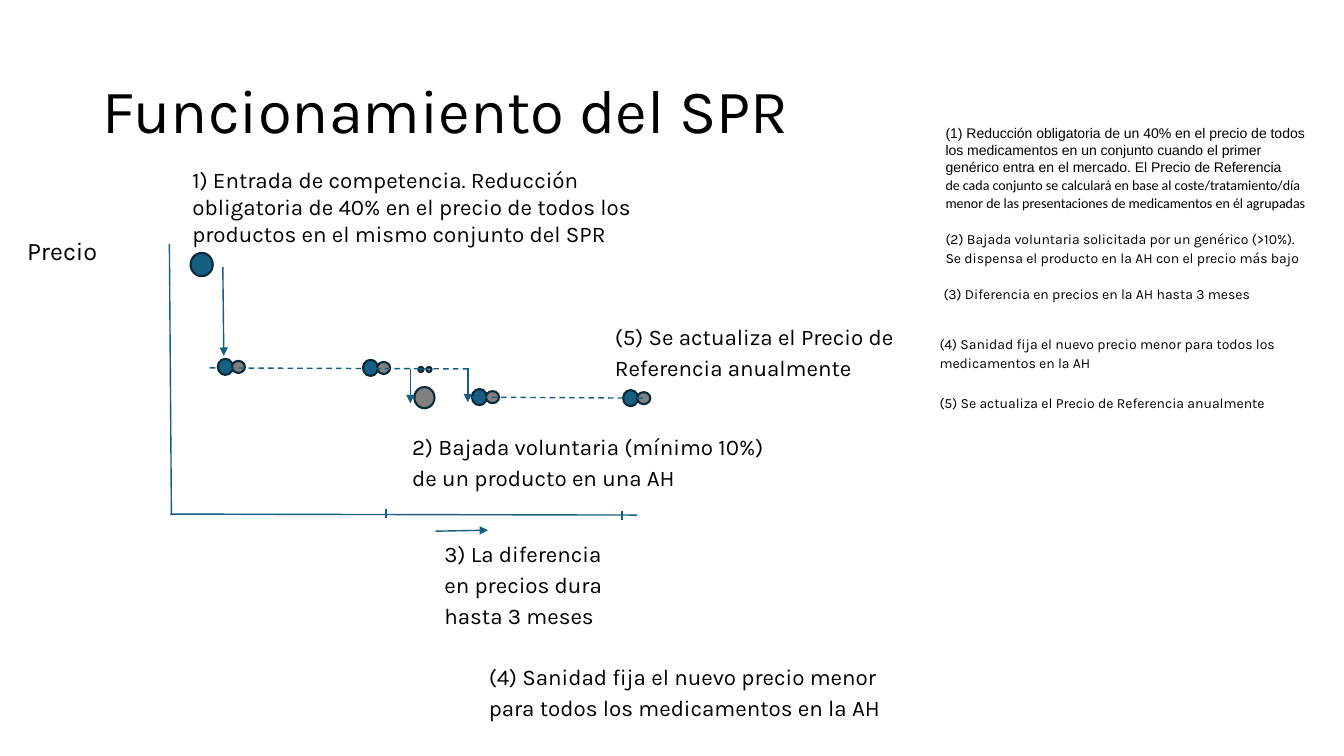
"""Build the slide that explains how the reference price system works."""
from lxml.etree import SubElement
from pptx import Presentation
from pptx.dml.color import RGBColor
from pptx.enum.dml import MSO_LINE
from pptx.enum.shapes import MSO_CONNECTOR, MSO_SHAPE
from pptx.enum.text import MSO_ANCHOR, MSO_AUTO_SIZE, PP_ALIGN
from pptx.oxml.ns import qn
from pptx.util import Inches, Pt

BLUE, GREY, OUTLINE, BLACK = "156082", "808080", "092A39", "000000"


def color(value):
    return RGBColor.from_string(value)


def add_text(paragraph, text, size, font):
    run = paragraph.add_run()
    run.text = text
    run.font.size = Pt(size)
    run.font.name = font
    run.font.color.rgb = color(BLACK)


presentation = Presentation()
presentation.slide_width = Inches(13.33)
presentation.slide_height = Inches(7.5)
slide = presentation.slides.add_slide(presentation.slide_layouts[5])

title = slide.shapes.title
title.left, title.top = Inches(0.92), Inches(0.4)
title.width, title.height = Inches(11.5), Inches(1.45)
title.text_frame.auto_size = MSO_AUTO_SIZE.NONE
title.text_frame.vertical_anchor = MSO_ANCHOR.MIDDLE
title_paragraph = title.text_frame.paragraphs[0]
title_paragraph.alignment = PP_ALIGN.LEFT
title_paragraph.line_spacing = 0.9
add_text(title_paragraph, "Funcionamiento del SPR", 44, "Karla")

axes = [
    (1.68, 2.42, 1.7, 5.11),
    (1.69, 5.1, 6.32, 5.11),
    (3.83, 5.05, 3.83, 5.14),
    (6.17, 5.07, 6.17, 5.16),
]
price_levels = [(2.08, 3.65, 4.67, 3.66), (4.68, 3.94, 6.4, 3.95)]
arrows = [
    (2.21, 2.65, 2.22, 3.53),
    (4.32, 5.27, 4.84, 5.26),
    (4.07, 3.66, 4.07, 4),
    (4.64, 3.65, 4.64, 3.99),
]

dots = [(1.89, 2.51, 0.22, 0.23, BLUE)]
for left, top in [(2.16, 3.56), (3.6, 3.57), (4.68, 3.86), (6.18, 3.87)]:
    dots.append((left, top, 0.15, 0.16, BLUE))
    dots.append((left + 0.14, top + 0.02, 0.13, 0.12, GREY))
dots += [
    (4.15, 3.64, 0.05, 0.05, BLUE),
    (4.23, 3.64, 0.05, 0.05, GREY),
    (4.11, 3.84, 0.2, 0.21, GREY),
]
for left, top, width, height, fill in dots:
    dot = slide.shapes.add_shape(
        MSO_SHAPE.OVAL, Inches(left), Inches(top), Inches(width), Inches(height)
    )
    dot.shadow.inherit = False
    dot.fill.solid()
    dot.fill.fore_color.rgb = color(fill)
    dot.line.color.rgb = color(OUTLINE)
    dot.line.width = Pt(1.5)

for kind, segments in [("axis", axes), ("level", price_levels), ("arrow", arrows)]:
    for segment in segments:
        connector = slide.shapes.add_connector(
            MSO_CONNECTOR.STRAIGHT, *[Inches(value) for value in segment]
        )
        connector.line.color.rgb = color(BLUE)
        connector.line.width = Pt(1)
        if kind == "level":
            connector.line.dash_style = MSO_LINE.DASH
        properties = connector._element.spPr
        if kind == "arrow":
            outline = properties.find(qn("a:ln"))
            SubElement(outline, qn("a:tailEnd"), type="triangle")
        SubElement(properties, qn("a:effectLst"))

KARLA_SPACING = (1.15, 8)
labels = [
    (0.17, 2.24, 1.46, 1.06, 18, [("Precio", "Karla", KARLA_SPACING)]),
    (1.81, 1.6, 4.64, 0.91, 16, [(
        "1) Entrada de competencia. Reducción obligatoria de 40% en el precio "
        "de todos los productos en el mismo conjunto del SPR", "Karla", (1, 0))]),
    (3.99, 4.21, 3.79, 1.06, 16, [(
        "2) Bajada voluntaria (mínimo 10%) de un producto en una AH",
        "Karla", KARLA_SPACING)]),
    (4.31, 5.27, 1.88, 1.29, 16, [(
        "3) La diferencia en precios dura hasta 3 meses", "Karla", KARLA_SPACING)]),
    (4.75, 6.49, 4.11, 0.73, 16, [(
        "(4) Sanidad fija el nuevo precio menor para todos los medicamentos en la AH",
        "Karla", KARLA_SPACING)]),
    (6, 3.12, 3.79, 1.06, 16, [(
        "(5) Se actualiza el Precio de Referencia anualmente", "Karla", KARLA_SPACING)]),
    (9.28, 1.19, 3.8, 1.3, 10, [
        ("(1) Reducción obligatoria de un 40% en el precio de todos los medicamentos "
         "en un conjunto cuando el primer genérico entra en el mercado. El Precio de "
         "Referencia", "Arial", (1, 0)),
        ("de cada conjunto se calculará en base al coste/tratamiento/día menor de las "
         "presentaciones de medicamentos en él agrupadas", "Calibri", (1.07, 8)),
    ]),
    (9.28, 2.21, 3.73, 1.06, 10, [(
        "(2) Bajada voluntaria solicitada por un genérico (>10%). Se dispensa el "
        "producto en la AH con el precio más bajo", "Karla", KARLA_SPACING)]),
    (9.26, 2.76, 3.8, 0.86, 10, [(
        "(3) Diferencia en precios en la AH hasta 3 meses", "Karla", KARLA_SPACING)]),
    (9.22, 3.25, 3.8, 1.06, 10, [(
        "(4) Sanidad fija el nuevo precio menor para todos los medicamentos en la AH",
        "Karla", KARLA_SPACING)]),
    (9.22, 3.84, 3.79, 1.06, 10, [(
        "(5) Se actualiza el Precio de Referencia anualmente", "Karla", KARLA_SPACING)]),
]
for left, top, width, height, size, paragraphs in labels:
    label = slide.shapes.add_textbox(
        Inches(left), Inches(top), Inches(width), Inches(height)
    )
    frame = label.text_frame
    frame.word_wrap = True
    for index, (text, font, (line_spacing, space_after)) in enumerate(paragraphs):
        paragraph = frame.add_paragraph() if index else frame.paragraphs[0]
        paragraph.line_spacing = line_spacing
        paragraph.space_after = Pt(space_after)
        add_text(paragraph, text, size, font)

presentation.save("out.pptx")
